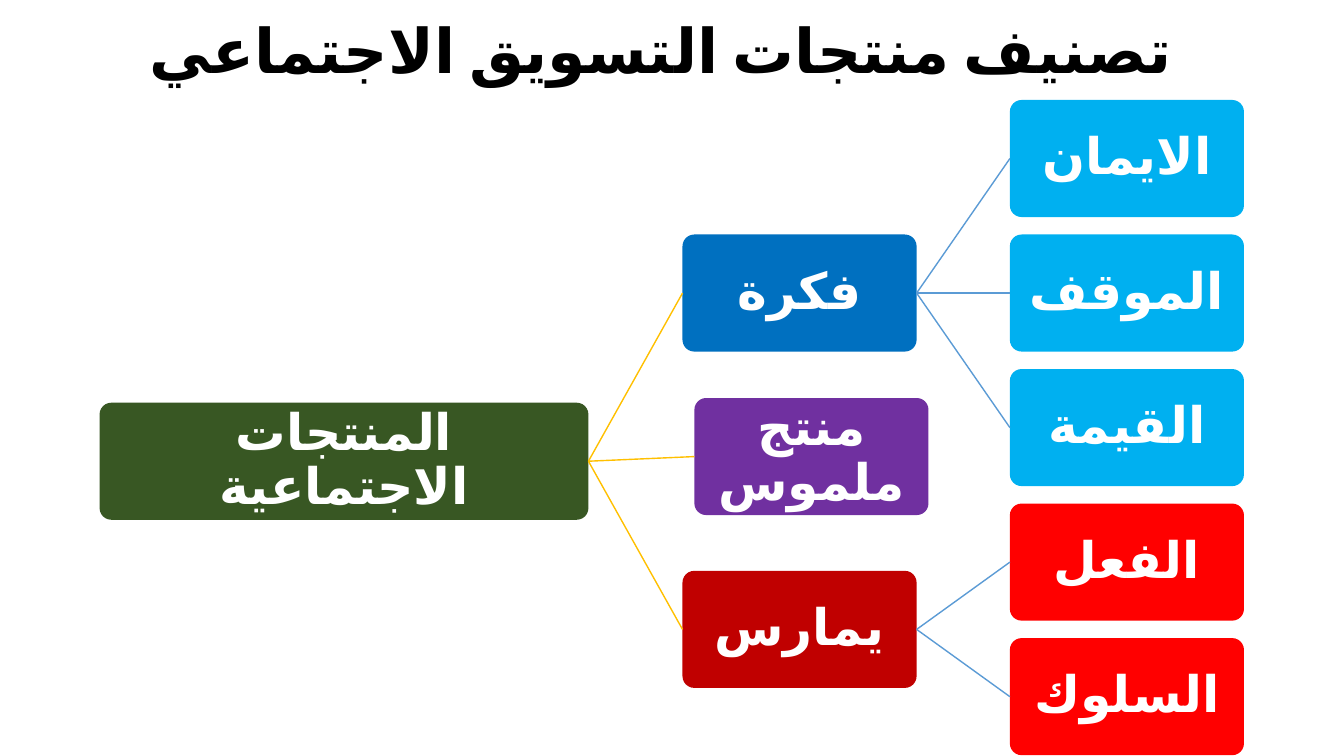
from lxml.etree import SubElement
from pptx import Presentation
from pptx.dml.color import RGBColor
from pptx.enum.lang import MSO_LANGUAGE_ID
from pptx.enum.shapes import MSO_CONNECTOR, MSO_SHAPE
from pptx.enum.text import MSO_ANCHOR, MSO_AUTO_SIZE, PP_ALIGN
from pptx.oxml.ns import qn
from pptx.util import Cm, Pt

BLACK = RGBColor(0x00, 0x00, 0x00)
WHITE = RGBColor(0xFF, 0xFF, 0xFF)
GREEN = RGBColor(0x38, 0x57, 0x23)
BLUE = RGBColor(0x00, 0x70, 0xC0)
SKY = RGBColor(0x00, 0xB0, 0xF0)
PURPLE = RGBColor(0x70, 0x30, 0xA0)
MAROON = RGBColor(0xC0, 0x00, 0x00)
RED = RGBColor(0xFF, 0x00, 0x00)
GOLD = RGBColor(0xFF, 0xC0, 0x00)
STEEL = RGBColor(0x5B, 0x9B, 0xD5)

FACE = "Calibri"
TOP, STEP = 2.52, 3.39
HIGH, WIDE = 2.95, 5.9
ROOT_X, ROOT_W = 2.51, 12.32
KIND_X, LEAF_X = 17.2, 25.45

KINDS = [
    ("فكرة", BLUE, KIND_X, TOP + STEP, SKY, ["الايمان", "الموقف", "القيمة"]),
    ("منتج ملموس", PURPLE, 17.5, 10.03, None, []),
    ("يمارس", MAROON, KIND_X, TOP + 3.5 * STEP, RED, ["الفعل", "السلوك"]),
]


def write(frame, text, size, color):
    frame.text = text
    frame.word_wrap = True
    frame.auto_size = MSO_AUTO_SIZE.NONE
    frame.vertical_anchor = MSO_ANCHOR.MIDDLE
    para = frame.paragraphs[0]
    para.alignment = PP_ALIGN.CENTER
    para.line_spacing = 0.9
    run = para.runs[0]
    font = run.font
    font.name = FACE
    font.size = Pt(size)
    font.bold = True
    font.color.rgb = color
    font.language_id = MSO_LANGUAGE_ID.ARABIC
    SubElement(run._r.get_or_add_rPr(), qn("a:cs")).set("typeface", FACE)
    return para


def add_title(slide, text):
    title = slide.shapes.title
    title.left, title.top = Cm(2.06), Cm(-0.5)
    title.width, title.height = Cm(29.21), Cm(3.68)
    para = write(title.text_frame, text, 44, BLACK)
    para._p.get_or_add_pPr().set("rtl", "1")


def add_box(slide, text, color, left, top, width=WIDE):
    box = slide.shapes.add_shape(
        MSO_SHAPE.ROUNDED_RECTANGLE, Cm(left), Cm(top), Cm(width), Cm(HIGH))
    box.adjustments[0] = 0.1
    box.shadow.inherit = False
    box.fill.solid()
    box.fill.fore_color.rgb = color
    box.line.fill.background()
    frame = box.text_frame
    frame.margin_left = frame.margin_right = Cm(0.08)
    frame.margin_top = frame.margin_bottom = Cm(0.08)
    write(frame, text, 36, WHITE)
    return box


def add_link(slide, start, end, color):
    link = slide.shapes.add_connector(MSO_CONNECTOR.STRAIGHT, 0, 0, 0, 0)
    link.begin_connect(start, 3)
    link.end_connect(end, 1)
    link.line.color.rgb = color
    link.line.width = Pt(1)
    SubElement(link._element.spPr, qn("a:effectLst"))


def main():
    deck = Presentation()
    deck.slide_width, deck.slide_height = Cm(33.87), Cm(19.05)
    slide = deck.slides.add_slide(deck.slide_layouts[5])
    add_title(slide, "تصنيف منتجات التسويق الاجتماعي")
    root = add_box(slide, "المنتجات الاجتماعية", GREEN,
                   ROOT_X, TOP + 2.25 * STEP, ROOT_W)
    row = 0
    for text, color, left, top, tint, leaves in KINDS:
        kind = add_box(slide, text, color, left, top)
        add_link(slide, root, kind, GOLD)
        for name in leaves:
            leaf = add_box(slide, name, tint, LEAF_X, TOP + row * STEP)
            add_link(slide, kind, leaf, STEEL)
            row += 1
    deck.save("out.pptx")


if __name__ == "__main__":
    main()
